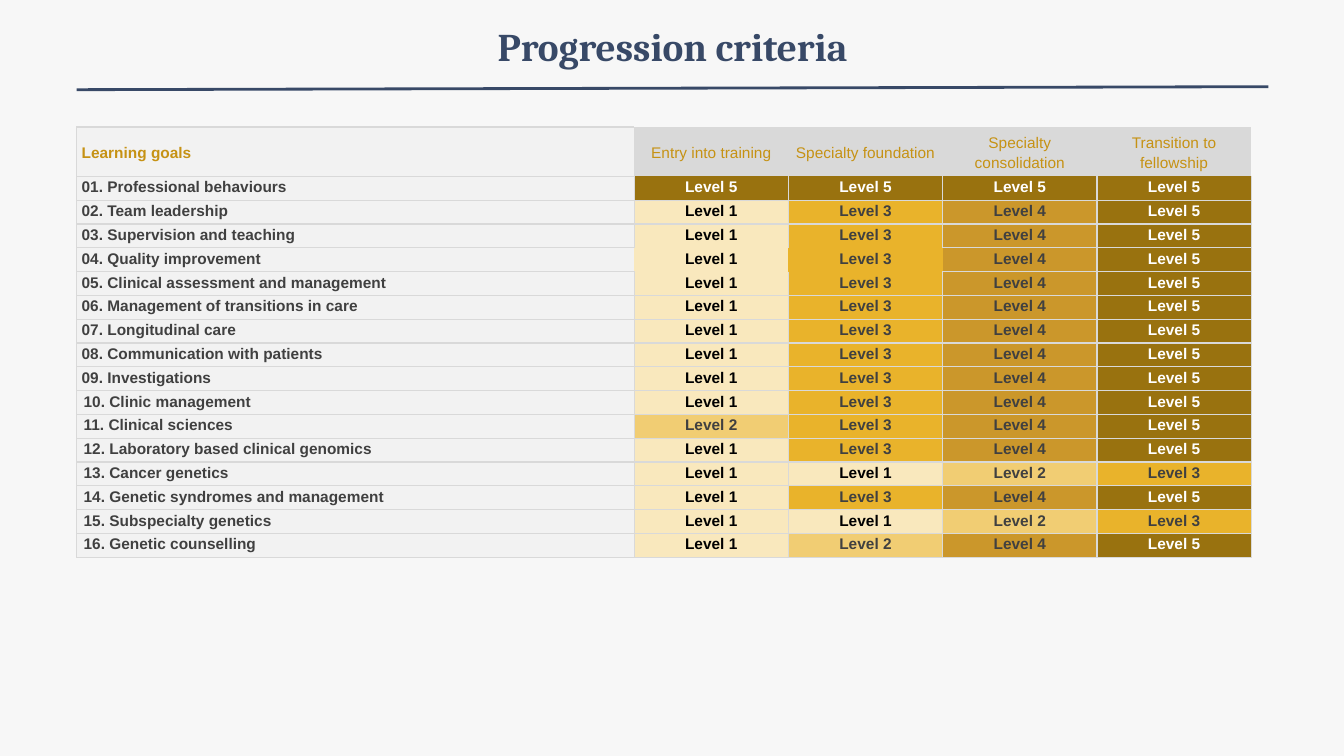
import dataclasses

import lxml.etree
import pptx
import pptx.dml.color
import pptx.enum.shapes
import pptx.enum.text
import pptx.oxml.ns
import pptx.oxml.xmlchemy
import pptx.slide
import pptx.table
import pptx.text.text
import pptx.util

Inches = pptx.util.Inches
Pt = pptx.util.Pt
qn = pptx.oxml.ns.qn
Align = pptx.enum.text.PP_ALIGN
Anchor = pptx.enum.text.MSO_ANCHOR


@dataclasses.dataclass(frozen=True)
class Theme:
    page: str = "F7F7F7"
    navy: str = "384967"
    gold: str = "C69214"
    border: str = "D9D9D9"
    label_fill: str = "F2F2F2"
    label_text: str = "404040"
    title_font: str = "Cambria"
    table_font: str = "Arial"
    title_size: int = 28
    table_size: int = 11


@dataclasses.dataclass(frozen=True)
class CellStyle:
    fill: str
    color: str
    bold: bool = True
    align: Align = Align.CENTER
    anchor: Anchor = Anchor.TOP
    inset: float = 0.05


@dataclasses.dataclass(frozen=True)
class Goal:
    name: str
    levels: tuple[int, int, int, int] = (1, 3, 4, 5)


THEME = Theme()
HEADER_STYLE = CellStyle(THEME.border, THEME.gold, bold=False, anchor=Anchor.MIDDLE)
CORNER_STYLE = CellStyle(THEME.label_fill, THEME.gold, align=Align.LEFT, anchor=Anchor.MIDDLE)
LABEL_STYLE = CellStyle(THEME.label_fill, THEME.label_text, align=Align.LEFT)
WIDE_LABEL_STYLE = dataclasses.replace(LABEL_STYLE, inset=0.07)
LEVEL_STYLES = {
    1: CellStyle("F9E8BD", "000000"),
    2: CellStyle("F1CD73", "404040"),
    3: CellStyle("E9B32B", "404040"),
    4: CellStyle("CB972B", "404040"),
    5: CellStyle("99720F", "FFFFFF"),
}

STAGES = ("Entry into training", "Specialty foundation",
          "Specialty consolidation", "Transition to fellowship")
GOALS = (
    Goal("Professional behaviours", (5, 5, 5, 5)),
    Goal("Team leadership"),
    Goal("Supervision and teaching"),
    Goal("Quality improvement"),
    Goal("Clinical assessment and management"),
    Goal("Management of transitions in care"),
    Goal("Longitudinal care"),
    Goal("Communication with patients"),
    Goal("Investigations"),
    Goal("Clinic management"),
    Goal("Clinical sciences", (2, 3, 4, 5)),
    Goal("Laboratory based clinical genomics"),
    Goal("Cancer genetics", (1, 1, 2, 3)),
    Goal("Genetic syndromes and management"),
    Goal("Subspecialty genetics", (1, 1, 2, 3)),
    Goal("Genetic counselling", (1, 2, 4, 5)),
)

TABLE_LEFT, TABLE_TOP, TABLE_HEIGHT = 0.76, 1.26, 4.27
LABEL_WIDTH, STAGE_WIDTH, HEADER_HEIGHT = 5.53, 1.53, 0.49
GOAL_HEIGHT = (TABLE_HEIGHT - HEADER_HEIGHT) / len(GOALS)
PLAIN_TABLE_STYLE = "{2D5ABB26-0587-4C30-8999-92F81FD0307C}"
BORDERLESS = {(0, 1), (0, 2), (0, 3), (0, 4), (4, 1), (4, 2)}
NEIGHBOURS = {"a:lnL": (0, -1), "a:lnR": (0, 1), "a:lnT": (-1, 0), "a:lnB": (1, 0)}


def rgb(value: str) -> pptx.dml.color.RGBColor:
    return pptx.dml.color.RGBColor.from_string(value)


def style_paragraph(para: pptx.text.text._Paragraph, font: str, size: int,
                    color: str, bold: bool, align: Align) -> None:
    para.alignment = align
    para.font.name = font
    para.font.size = Pt(size)
    para.font.bold = bold
    para.font.color.rgb = rgb(color)


def draw_title(page: pptx.slide.Slide) -> None:
    box = page.shapes.add_textbox(Inches(2.17), Inches(0.17), Inches(9), Inches(1.25))
    box.text_frame.word_wrap = True
    para = box.text_frame.paragraphs[0]
    para.text = "Progression criteria"
    style_paragraph(para, THEME.title_font, THEME.title_size, THEME.navy, True, Align.CENTER)


def draw_rule(page: pptx.slide.Slide) -> None:
    rule = page.shapes.add_connector(
        pptx.enum.shapes.MSO_CONNECTOR.STRAIGHT,
        Inches(0.76), Inches(0.89), Inches(12.58), Inches(0.86))
    rule.line.color.rgb = rgb(THEME.navy)
    rule.line.width = Pt(2)
    lxml.etree.SubElement(rule._element.spPr, qn("a:effectLst"))


def set_borders(cell: pptx.table._Cell, row: int, column: int) -> None:
    """Draw each edge unless this cell or the one across it is borderless."""
    properties = cell._tc.get_or_add_tcPr()
    for tag, (down, across) in NEIGHBOURS.items():
        edge = lxml.etree.SubElement(properties, qn(tag), w=str(Pt(1)))
        if BORDERLESS & {(row, column), (row + down, column + across)}:
            lxml.etree.SubElement(edge, qn("a:noFill"))
        else:
            fill = lxml.etree.SubElement(edge, qn("a:solidFill"))
            lxml.etree.SubElement(fill, qn("a:srgbClr"), val=THEME.border)


def fill_cell(table: pptx.table.Table, row: int, column: int,
              text: str, style: CellStyle) -> None:
    cell = table.cell(row, column)
    set_borders(cell, row, column)
    cell.fill.solid()
    cell.fill.fore_color.rgb = rgb(style.fill)
    cell.margin_left = cell.margin_right = Inches(style.inset)
    cell.margin_top = cell.margin_bottom = 0
    cell.vertical_anchor = style.anchor
    para = cell.text_frame.paragraphs[0]
    para.text = text
    para.line_spacing = 1.15
    style_paragraph(para, THEME.table_font, THEME.table_size,
                    style.color, style.bold, style.align)


def draw_criteria_table(page: pptx.slide.Slide) -> None:
    frame = page.shapes.add_table(
        len(GOALS) + 1, len(STAGES) + 1, Inches(TABLE_LEFT), Inches(TABLE_TOP),
        Inches(LABEL_WIDTH + STAGE_WIDTH * len(STAGES)), Inches(TABLE_HEIGHT))
    table = frame.table
    table.horz_banding = False
    table._tbl.tblPr.find(qn("a:tableStyleId")).text = PLAIN_TABLE_STYLE
    for index, column in enumerate(table.columns):
        column.width = Inches(STAGE_WIDTH if index else LABEL_WIDTH)
    for index, row in enumerate(table.rows):
        row.height = Inches(GOAL_HEIGHT if index else HEADER_HEIGHT)

    fill_cell(table, 0, 0, "Learning goals", CORNER_STYLE)
    for column, stage in enumerate(STAGES, start=1):
        fill_cell(table, 0, column, stage, HEADER_STYLE)
    for number, goal in enumerate(GOALS, start=1):
        label_style = LABEL_STYLE if number < 10 else WIDE_LABEL_STYLE
        fill_cell(table, number, 0, f"{number:02d}. {goal.name}", label_style)
        for column, level in enumerate(goal.levels, start=1):
            fill_cell(table, number, column, f"Level {level}", LEVEL_STYLES[level])


def main() -> None:
    deck = pptx.Presentation()
    deck.slide_width, deck.slide_height = Inches(13.33), Inches(7.5)
    page = deck.slides.add_slide(deck.slide_layouts[6])
    page.background.fill.solid()
    page.background.fill.fore_color.rgb = rgb(THEME.page)
    draw_title(page)
    draw_rule(page)
    draw_criteria_table(page)
    deck.save("out.pptx")


if __name__ == "__main__":
    main()
